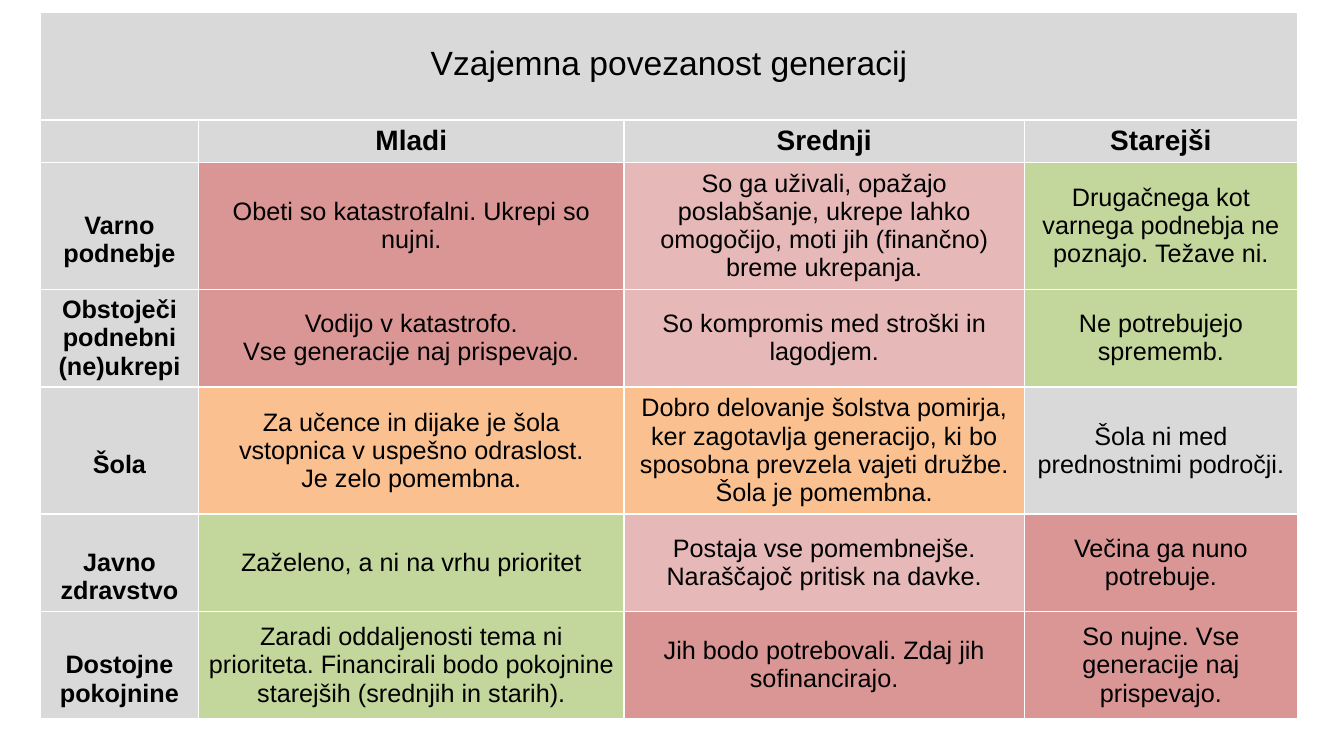
from lxml import etree
from pptx import Presentation
from pptx.dml.color import RGBColor
from pptx.enum.text import MSO_ANCHOR, PP_ALIGN
from pptx.oxml.ns import qn
from pptx.util import Inches, Pt

CENTER = PP_ALIGN.CENTER
TOP, MIDDLE = MSO_ANCHOR.TOP, MSO_ANCHOR.MIDDLE

BLACK = RGBColor(0x00, 0x00, 0x00)
GREY = RGBColor(0xD9, 0xD9, 0xD9)
RED = RGBColor(0xD9, 0x96, 0x94)
PINK = RGBColor(0xE6, 0xB9, 0xB8)
ORANGE = RGBColor(0xFA, 0xC0, 0x90)
GREEN = RGBColor(0xC3, 0xD6, 0x9B)
BORDER_HEX = "FFFFFF"

TITLE = "Vzajemna povezanost generacij"
GENERATIONS = ["", "Mladi", "Srednji", "Starejši"]
# Topic, whether its label sits lower in the cell, then a view per generation
TOPICS = [
    ("Varno podnebje", True, [
        ("Obeti so katastrofalni. Ukrepi so nujni.", RED),
        ("So ga uživali, opažajo poslabšanje, ukrepe lahko omogočijo, "
         "moti jih (finančno) breme ukrepanja.", PINK),
        ("Drugačnega kot varnega podnebja ne poznajo. Težave ni.", GREEN)]),
    ("Obstoječi podnebni (ne)ukrepi", False, [
        ("Vodijo v katastrofo.\nVse generacije naj prispevajo.", RED),
        ("So kompromis med stroški in lagodjem.", PINK),
        ("Ne potrebujejo sprememb.", GREEN)]),
    ("Šola", True, [
        ("Za učence in dijake je šola vstopnica v uspešno odraslost.\n"
         "Je zelo pomembna.", ORANGE),
        ("Dobro delovanje šolstva pomirja, ker zagotavlja generacijo, ki bo "
         "sposobna prevzela vajeti družbe. Šola je pomembna.", ORANGE),
        ("Šola ni med prednostnimi področji.", GREY)]),
    ("Javno zdravstvo", True, [
        ("Zaželeno, a ni na vrhu prioritet", GREEN),
        ("Postaja vse pomembnejše. Naraščajoč pritisk na davke.", PINK),
        ("Večina ga nuno potrebuje.", RED)]),
    ("Dostojne pokojnine", True, [
        ("Zaradi oddaljenosti tema ni prioriteta. Financirali bodo pokojnine "
         "starejših (srednjih in starih).", GREEN),
        ("Jih bodo potrebovali. Zdaj jih sofinancirajo.", RED),
        ("So nujne. Vse generacije naj prispevajo.", RED)]),
]

COLUMN_WIDTHS = [1.57, 4.22, 3.97, 2.71]
ROW_HEIGHTS = [1.07, 0.42, 1.26, 0.97, 1.26, 0.97, 1.06]
TABLE_LEFT, TABLE_TOP = 0.4, 0.12
LOWERED_MARGIN = Inches(0.33)


def add_borders(cell):
    properties = cell._tc.get_or_add_tcPr()
    for position, side in enumerate(("lnL", "lnR", "lnT", "lnB")):
        line = etree.Element(qn(f"a:{side}"), w=str(Pt(1)))
        fill = etree.SubElement(line, qn("a:solidFill"))
        etree.SubElement(fill, qn("a:srgbClr"), val=BORDER_HEX)
        properties.insert(position, line)


def fill_cell(cell, text, color, size=18, bold=False, anchor=MIDDLE, lowered=False):
    """Lowered text starts one line below the top of its cell."""
    cell.fill.solid()
    cell.fill.fore_color.rgb = color
    add_borders(cell)
    cell.vertical_anchor = anchor
    if lowered:
        cell.margin_top = LOWERED_MARGIN
    if not text:
        return
    frame = cell.text_frame
    for index, line in enumerate(text.split("\n")):
        paragraph = frame.add_paragraph() if index else frame.paragraphs[0]
        paragraph.alignment = CENTER
        run = paragraph.add_run()
        run.text = line
        run.font.name = "Arial"
        run.font.size = Pt(size)
        run.font.bold = bold
        run.font.color.rgb = BLACK


def main():
    presentation = Presentation()
    presentation.slide_width = Inches(13.33)
    presentation.slide_height = Inches(7.5)
    slide = presentation.slides.add_slide(presentation.slide_layouts[6])

    table = slide.shapes.add_table(
        len(ROW_HEIGHTS), len(COLUMN_WIDTHS), Inches(TABLE_LEFT), Inches(TABLE_TOP),
        Inches(sum(COLUMN_WIDTHS)), Inches(sum(ROW_HEIGHTS))).table
    table.first_row = table.horz_banding = False
    for column, width in zip(table.columns, COLUMN_WIDTHS):
        column.width = Inches(width)
    for row, height in zip(table.rows, ROW_HEIGHTS):
        row.height = Inches(height)

    title_cell = table.cell(0, 0)
    title_cell.merge(table.cell(0, len(COLUMN_WIDTHS) - 1))
    fill_cell(title_cell, TITLE, GREY, size=24, anchor=TOP, lowered=True)
    for column, generation in enumerate(GENERATIONS):
        fill_cell(table.cell(1, column), generation, GREY, size=20, bold=True, anchor=TOP)
    for row, (topic, lowered, views) in enumerate(TOPICS, start=2):
        fill_cell(table.cell(row, 0), topic, GREY, bold=True, lowered=lowered)
        for column, (view, color) in enumerate(views, start=1):
            fill_cell(table.cell(row, column), view, color)

    presentation.save("out.pptx")


if __name__ == "__main__":
    main()
